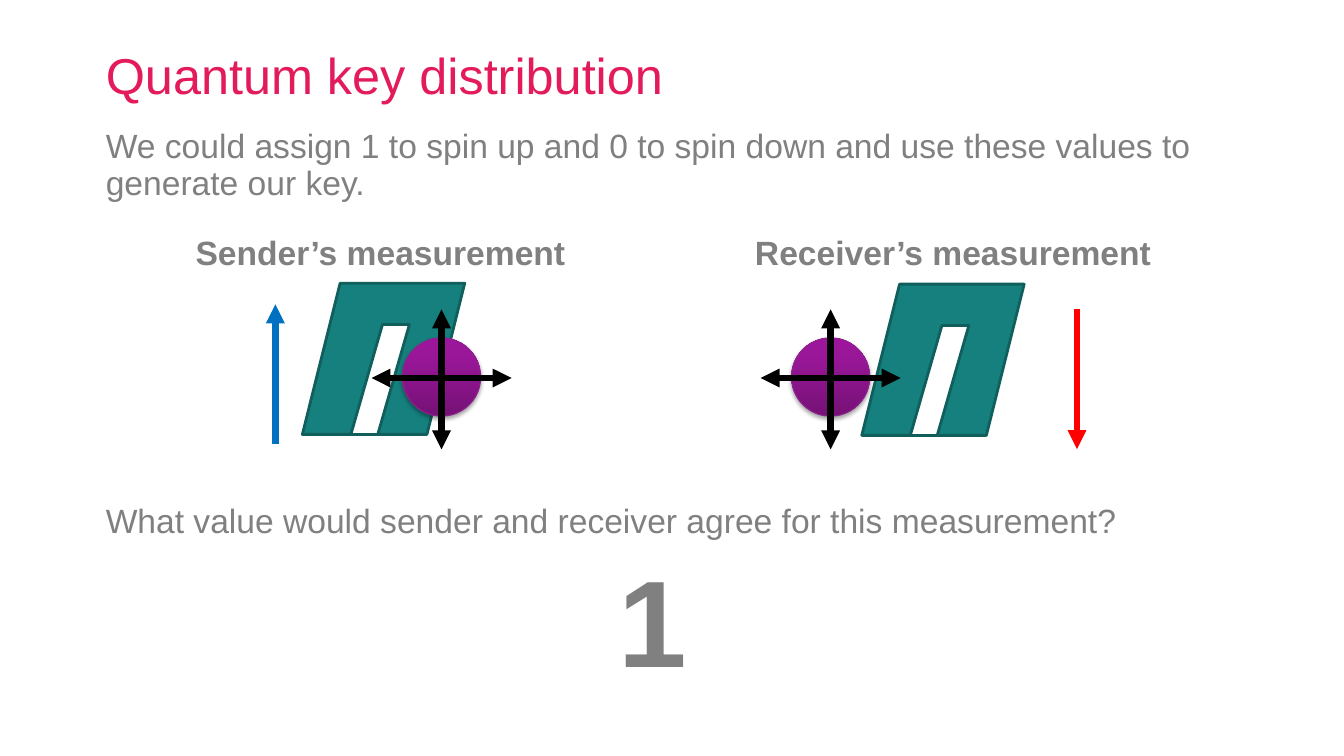
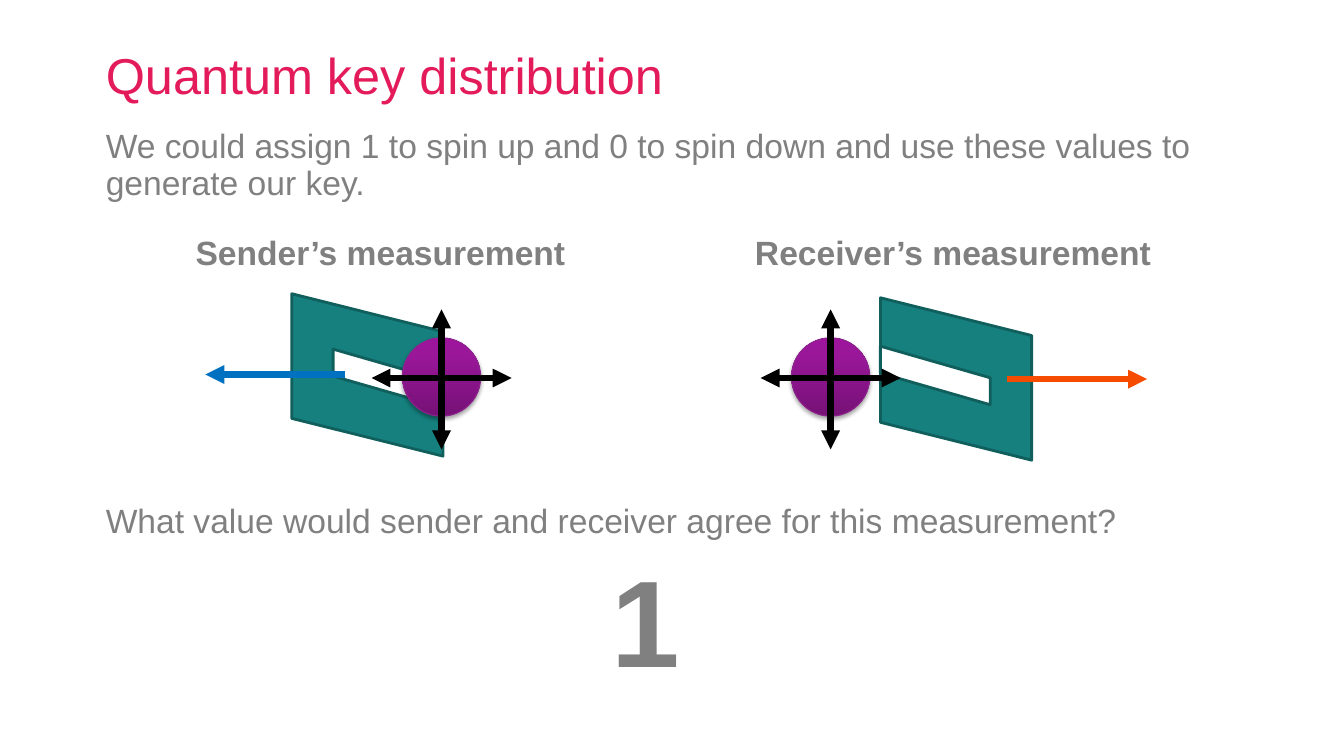
from pptx import Presentation
from pptx.dml.color import RGBColor
from pptx.enum import shapes, text
from pptx.oxml import parse_xml
from pptx.oxml.ns import nsdecls, qn
from pptx.oxml.xmlchemy import OxmlElement
from pptx.util import Pt

COLOURS = {
    "title": "E41B5B", "body": "808080", "plate": "15807D", "plate edge": "105F5C",
    "slit": "FFFFFF", "particle edge": "8E248E", "axis": "000000",
    "blue": "0070C0", "red": "FF0000", "orange": "F54C00",
}
PARTICLE_STOPS = [(0, "761176"), (80, "9A179A"), (100, "9D149D")]
FONT = "Arial"
MARGIN = 75.6
TEXT_WIDTH = 820
PANEL_TOP = 168.5
ARROW_LENGTH = 100
PARTICLE_SIZE = 56
UP, DOWN, LEFT, RIGHT = (0, -1), (0, 1), (-1, 0), (1, 0)

# All places are relative to the top left corner of the panel.
SENDER = {"heading": "Sender’s measurement", "left": 139.7, "width": 269,
          "particle": (175.7, 101.5), "spin": (57, 99)}
RECEIVER = {"heading": "Receiver’s measurement", "left": 539.3, "width": 287,
            "particle": (54, 101.5), "spin": (230, 102.3)}

# Per panel: plate centre, plate rotation, spin direction and spin colour.
SLIDES = [
    {"answer left": 442,
     "panels": [(SENDER, (134.3, 87.8), 0, UP, "blue"),
                (RECEIVER, (134.3, 88.5), 0, DOWN, "red")]},
    {"answer left": 437,
     "panels": [(SENDER, (122.7, 99.3), 270, LEFT, "blue"),
                (RECEIVER, (143.6, 102.2), 90, RIGHT, "orange")]},
]


def colour(name):
    return RGBColor.from_string(COLOURS[name])


def write(shape, words, size, colour_name, bold=False, spacing=None):
    frame = shape.text_frame
    frame.word_wrap = True
    frame.auto_size = text.MSO_AUTO_SIZE.NONE
    frame.vertical_anchor = text.MSO_ANCHOR.TOP
    frame.margin_left = frame.margin_right = frame.margin_top = frame.margin_bottom = 0
    paragraph = frame.paragraphs[0]
    paragraph.alignment = text.PP_ALIGN.LEFT
    if spacing:
        paragraph.line_spacing = Pt(spacing)
    run = paragraph.add_run()
    run.text = words
    run.font.name = FONT
    run.font.size = Pt(size)
    run.font.bold = bold
    run.font.color.rgb = colour(colour_name)


def add_title(slide, words):
    title = slide.shapes.title
    title.left, title.top, title.width, title.height = Pt(MARGIN), Pt(31.7), Pt(823), Pt(72.7)
    write(title, words, 36, "title")


def add_text(slide, words, left, top, width, height, size=24, bold=False):
    box = slide.shapes.add_textbox(Pt(left), Pt(top), Pt(width), Pt(height))
    write(box, words, size, "body", bold, spacing=26)


def add_centred(slide, kind, centre, width, height, edge, edge_width):
    shape = slide.shapes.add_shape(kind, Pt(centre[0] - width / 2), Pt(centre[1] - height / 2),
                                   Pt(width), Pt(height))
    shape.shadow.inherit = False
    shape.line.color.rgb = colour(edge)
    shape.line.width = Pt(edge_width)
    return shape


def add_plate(slide, centre, rotation):
    """Draw a slanted plate with a slit, turned together by quarter turns."""
    shift_x, shift_y = -2.5, 14.8
    for _ in range(rotation // 90):
        shift_x, shift_y = -shift_y, shift_x
    slit_centre = (centre[0] + shift_x, centre[1] + shift_y)
    parts = [(centre, 116, 108, 0.25, "plate"), (slit_centre, 41.8, 78.5, 0.54, "slit")]
    for place, width, height, slant, fill in parts:
        shape = add_centred(slide, shapes.MSO_SHAPE.PARALLELOGRAM, place, width, height,
                            "plate edge", 2)
        shape.adjustments[0] = slant
        shape.rotation = rotation
        shape.fill.solid()
        shape.fill.fore_color.rgb = colour(fill)


def add_arrow(slide, centre, direction, colour_name, both_ends=False):
    half_x, half_y = (part * ARROW_LENGTH / 2 for part in direction)
    line = slide.shapes.add_connector(
        shapes.MSO_CONNECTOR.STRAIGHT, Pt(centre[0] - half_x), Pt(centre[1] - half_y),
        Pt(centre[0] + half_x), Pt(centre[1] + half_y))
    line.line.color.rgb = colour(colour_name)
    line.line.width = Pt(4.5)
    for tag in ["a:headEnd", "a:tailEnd"] if both_ends else ["a:tailEnd"]:
        end = OxmlElement(tag)
        end.set("type", "triangle")
        line.line._get_or_add_ln().append(end)
    line._element.spPr.append(OxmlElement("a:effectLst"))


def add_particle(slide, centre):
    """Draw a shaded ball with a horizontal and a vertical double arrow."""
    x, y = centre
    ball = add_centred(slide, shapes.MSO_SHAPE.OVAL, (x, y - 0.7), PARTICLE_SIZE, PARTICLE_SIZE,
                       "particle edge", 0.75)
    stops = "".join(f'<a:gs pos="{position * 1000}"><a:srgbClr val="{value}"/></a:gs>'
                    for position, value in PARTICLE_STOPS)
    properties = ball._element.spPr
    properties.find(qn("a:prstGeom")).addnext(parse_xml(
        f'<a:gradFill {nsdecls("a")} rotWithShape="1"><a:gsLst>{stops}</a:gsLst>'
        '<a:lin ang="16200000" scaled="0"/></a:gradFill>'))
    properties.find(qn("a:effectLst")).append(parse_xml(
        f'<a:outerShdw {nsdecls("a")} blurRad="{Pt(3.1)}" dist="{Pt(1.8)}" dir="5400000" '
        'rotWithShape="0"><a:srgbClr val="000000"><a:alpha val="35000"/></a:srgbClr>'
        '</a:outerShdw>'))
    add_arrow(slide, (x, y + 1), DOWN, "axis", both_ends=True)
    add_arrow(slide, centre, RIGHT, "axis", both_ends=True)


def add_measurement(slide, side, plate, rotation, direction, spin_colour):
    def place(point):
        return side["left"] + point[0], PANEL_TOP + point[1]

    add_plate(slide, place(plate), rotation)
    add_text(slide, side["heading"], side["left"], PANEL_TOP, side["width"], 42, bold=True)
    add_particle(slide, place(side["particle"]))
    add_arrow(slide, place(side["spin"]), direction, spin_colour)


def add_key_slide(presentation, content):
    slide = presentation.slides.add_slide(presentation.slide_layouts[5])
    add_title(slide, "Quantum key distribution")
    add_text(slide, "We could assign 1 to spin up and 0 to spin down and use these values "
                    "to generate our key.", MARGIN, 92.2, TEXT_WIDTH, 60)
    for panel in content["panels"]:
        add_measurement(slide, *panel)
    add_text(slide, "What value would sender and receiver agree for this measurement?",
             MARGIN, 360, TEXT_WIDTH, 60)
    add_text(slide, "1", content["answer left"], 468.7, 78, 70, size=88, bold=True)


def main():
    presentation = Presentation()
    presentation.slide_width, presentation.slide_height = Pt(960), Pt(540)
    for content in SLIDES:
        add_key_slide(presentation, content)
    presentation.save("out.pptx")


if __name__ == "__main__":
    main()
